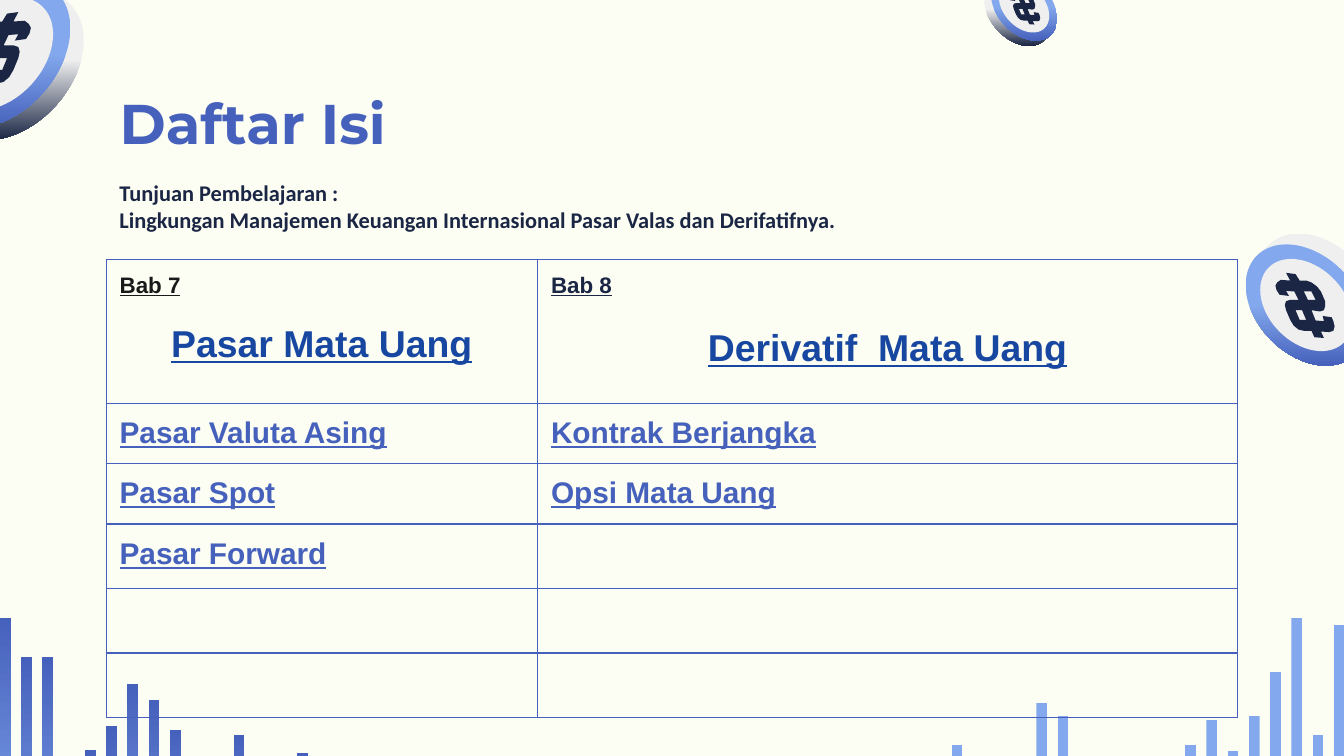
import math

from lxml import etree
from pptx import Presentation, util as u
from pptx.dml import color
from pptx.enum import shapes, text
from pptx.oxml import ns

BLUE, SKY, NAVY, PALE, INK, LINK = "4661BC", "83A8ED", "1A2644", "EFEFEF", "191919", "1747A0"
BAR_WIDTH, BAR_PITCH = 0.08, 0.158
LEFT_BARS = {0: (4.6, 1.88), 1: (4.89, 1.89), 2: (4.89, 1.75), 4: (5.58, 1.44), 5: (5.4, 2),
             6: (5.09, 1.78), 7: (5.21, 1.75), 8: (5.43, 1.35), 11: (5.47, 1.36), 14: (5.6, 2)}
RIGHT_BARS = {0: (5.54, 1.36), 4: (5.23, 1.75), 5: (5.33, 1.78), 11: (5.54, 1.49),
              12: (5.36, 1.35), 13: (5.59, 1.13), 14: (5.33, 2.04), 15: (5, 2),
              16: (4.6, 2.32), 17: (5.47, 1.92), 18: (4.65, 1.98)}
DOLLAR = [
    [(18, 0), (25, 12), (9, 11), (3, 15), (0, 20), (2, 27), (7, 34), (23, 36), (18, 28),
     (32, 29), (39, 42), (25, 42), (18, 44), (16, 50), (18, 58), (25, 73), (31, 82), (39, 88),
     (48, 90), (61, 90), (66, 100), (82, 101), (77, 91), (91, 92), (98, 90), (100, 83),
     (98, 75), (95, 69), (80, 67), (82, 75), (68, 74), (61, 58), (75, 60), (82, 58),
     (84, 52), (84, 44), (77, 29), (70, 21), (61, 15), (52, 12), (41, 12), (34, 2)],
    [(48, 29), (61, 29), (68, 42), (55, 42)],
    [(34, 58), (45, 58), (52, 73), (41, 73)],
]


def rgb(code):
    """Turn a hex string into a colour."""
    return color.RGBColor.from_string(code)


def apply(target, values):
    """Set each named attribute of the target."""
    for name, value in values.items():
        setattr(target, name, value)


def paint(shape, *codes, start=0, angle=270):
    """Give a shape a solid or two-stop gradient fill, with no line or shadow."""
    shape.shadow.inherit = False
    shape.line.fill.background()
    if len(codes) == 1:
        shape.fill.solid()
        shape.fill.fore_color.rgb = rgb(codes[0])
        return
    shape.fill.gradient()
    shape.fill.gradient_angle = angle
    for stop, code, position in zip(shape.fill.gradient_stops, codes, (start, 1)):
        stop.position = position
        stop.color.rgb = rgb(code)


def outline(page, contours):
    """Build one closed freeform from contours in inches."""
    contours = [[(u.Inches(x), u.Inches(y)) for x, y in points] for points in contours]
    builder = page.shapes.build_freeform(*contours[0][0])
    for index, points in enumerate(contours):
        if index:
            builder.move_to(*points[0])
        builder.add_line_segments(points[1:], close=True)
    return builder.convert_to_shape()


def add_coin(page, center, radii, tilt, depth, symbol, mirror=False):
    """Draw a tilted coin with a thick rim and a dollar sign."""
    cx, cy = center
    cos, sin = math.cos(math.radians(tilt)), math.sin(math.radians(tilt))

    def ellipse(scale, shift=(0, 0)):
        """List the points of the face, moving the side that looks along the shift."""
        points = []
        for step in range(72):
            angle = math.radians(step * 5)
            c, s = math.cos(angle), math.sin(angle)
            x, y = radii[0] * scale * c, radii[1] * scale * s
            nx, ny = radii[1] * c, radii[0] * s
            facing = (nx * cos - ny * sin) * shift[0] + (nx * sin + ny * cos) * shift[1] > 0
            points.append((cx + x * cos - y * sin + shift[0] * facing,
                           cy + x * sin + y * cos + shift[1] * facing))
        return points

    paint(outline(page, [ellipse(1, depth)]), PALE, NAVY, start=0.5)
    paint(outline(page, [ellipse(1)]), SKY, BLUE, start=0.5)
    paint(outline(page, [ellipse(0.76)]), PALE)
    left, top, width, height = symbol
    sign = [[(left + width * (100 - x if mirror else x) / 100, top + height * y / 100)
             for x, y in points] for points in DOLLAR]
    paint(outline(page, sign), NAVY)


def add_bars(page, left, bars, start, angle):
    """Place a row of bars in evenly spaced slots."""
    for slot, (top, height) in bars.items():
        box = (left + slot * BAR_PITCH, top, BAR_WIDTH, height)
        bar = page.shapes.add_shape(shapes.MSO_SHAPE.RECTANGLE, *map(u.Inches, box))
        paint(bar, SKY, BLUE, start=start, angle=angle)


def write(frame, lines, font, right=0.1, anchor=text.MSO_ANCHOR.TOP):
    """Set up a text frame and write its lines in bold."""
    apply(frame, {"word_wrap": True, "auto_size": text.MSO_AUTO_SIZE.NONE,
                  "vertical_anchor": anchor, "margin_left": u.Inches(0.1),
                  "margin_right": u.Inches(right), "margin_top": u.Inches(0.1),
                  "margin_bottom": u.Inches(0.1)})
    fill_lines(frame, lines, {"name": font, "bold": True})


def fill_lines(frame, lines, style):
    """Add a paragraph for each line of (words, size, colour, paragraph values)."""
    for index, (words, size, code, values) in enumerate(lines):
        para = frame.add_paragraph() if index else frame.paragraphs[0]
        apply(para, {"alignment": text.PP_ALIGN.LEFT, **values})
        span = para.add_run()
        span.text = words
        apply(span.font, {**style, "size": u.Pt(size)})
        span.font.color.rgb = rgb(code)


def add_heading(page, left, top, width):
    """Place the title and the learning goal below it."""
    title = page.shapes.title
    apply(title, {"left": u.Inches(left), "top": u.Inches(top),
                  "width": u.Inches(width), "height": u.Inches(0.63)})
    write(title.text_frame, [("Daftar Isi", 30, BLUE, {})], "Montserrat")
    goal = page.shapes.add_textbox(*map(u.Inches, (left, top + 0.71, width, 0.52)))
    lines = ["Tunjuan Pembelajaran :",
             "Lingkungan Manajemen Keuangan Internasional Pasar Valas dan Derifatifnya."]
    write(goal.text_frame, [(line, 12, NAVY, {}) for line in lines], "Calibri",
          right=0, anchor=text.MSO_ANCHOR.MIDDLE)


def add_borders(cell):
    """Draw a thin blue line on each side of a cell."""
    props = cell._tc.get_or_add_tcPr()
    for index, side in enumerate(("a:lnL", "a:lnR", "a:lnT", "a:lnB")):
        line = etree.Element(ns.qn(side), w=str(u.Pt(0.75)))
        fill = etree.SubElement(line, ns.qn("a:solidFill"))
        etree.SubElement(fill, ns.qn("a:srgbClr"), val=BLUE)
        props.insert(index, line)


def add_contents(page, left, top):
    """Place the table of chapters and topics."""
    widths, heights = (3.21, 5.21), (1.07, 0.45, 0.45, 0.48, 0.48, 0.48)

    def chapter(label, code, name, gap):
        """List the label and the centred name of a chapter."""
        centred = {"alignment": text.PP_ALIGN.CENTER, "space_before": u.Pt(gap)}
        return [(label, 12, code, {}), (name, 20, LINK, centred)]

    topics = [("Pasar Valuta Asing", "Kontrak Berjangka"), ("Pasar Spot", "Opsi Mata Uang"),
              ("Pasar Forward", ""), ("", ""), ("", "")]
    rows = [[chapter("Bab 7", INK, "Pasar Mata Uang", 14),
             chapter("Bab 8", NAVY, "Derivatif  Mata Uang", 16)]]
    rows += [[[(topic, 16, BLUE, {})] if topic else [] for topic in pair] for pair in topics]
    box = map(u.Inches, (left, top, sum(widths), sum(heights)))
    table = page.shapes.add_table(len(heights), len(widths), *box).table
    apply(table, {"first_row": False, "horz_banding": False})
    for column, width in zip(table.columns, widths):
        column.width = u.Inches(width)
    for row, height, contents in zip(table.rows, heights, rows):
        row.height = u.Inches(height)
        for cell, lines in zip(row.cells, contents):
            cell.fill.background()
            add_borders(cell)
            apply(cell, {f"margin_{side}": u.Inches(0.1)
                         for side in ("left", "right", "top", "bottom")})
            fill_lines(cell.text_frame, lines,
                       {"name": "Arial", "bold": True, "underline": True})
            if not lines:
                para = cell.text_frame.paragraphs[0]
                etree.SubElement(para._p, ns.qn("a:endParaRPr"), sz="1600")


def main():
    """Build and save the deck."""
    deck = Presentation()
    apply(deck, {"slide_width": u.Inches(10), "slide_height": u.Inches(10 * 9 / 16)})
    page = deck.slides.add_slide(deck.slide_layouts[5])
    page.background.fill.solid()
    page.background.fill.fore_color.rgb = rgb("FCFEF3")
    add_bars(page, 0, LEFT_BARS, start=0, angle=90)
    add_bars(page, 7.08, RIGHT_BARS, start=0.5, angle=270)
    add_coin(page, (-0.01, 0.4), (0.63, 0.44), -48, (0.1, 0.09), (-0.29, 0.09, 0.52, 0.59), True)
    add_coin(page, (7.62, 0.05), (0.29, 0.2), 47, (-0.05, 0.04), (7.5, -0.09, 0.24, 0.27))
    add_coin(page, (9.72, 2.27), (0.52, 0.37), 45, (0.09, -0.08), (9.49, 2.03, 0.44, 0.48))
    add_heading(page, 0.79, 0.56, 8.43)
    add_contents(page, 0.79, 1.93)
    deck.save("out.pptx")


if __name__ == "__main__":
    main()
